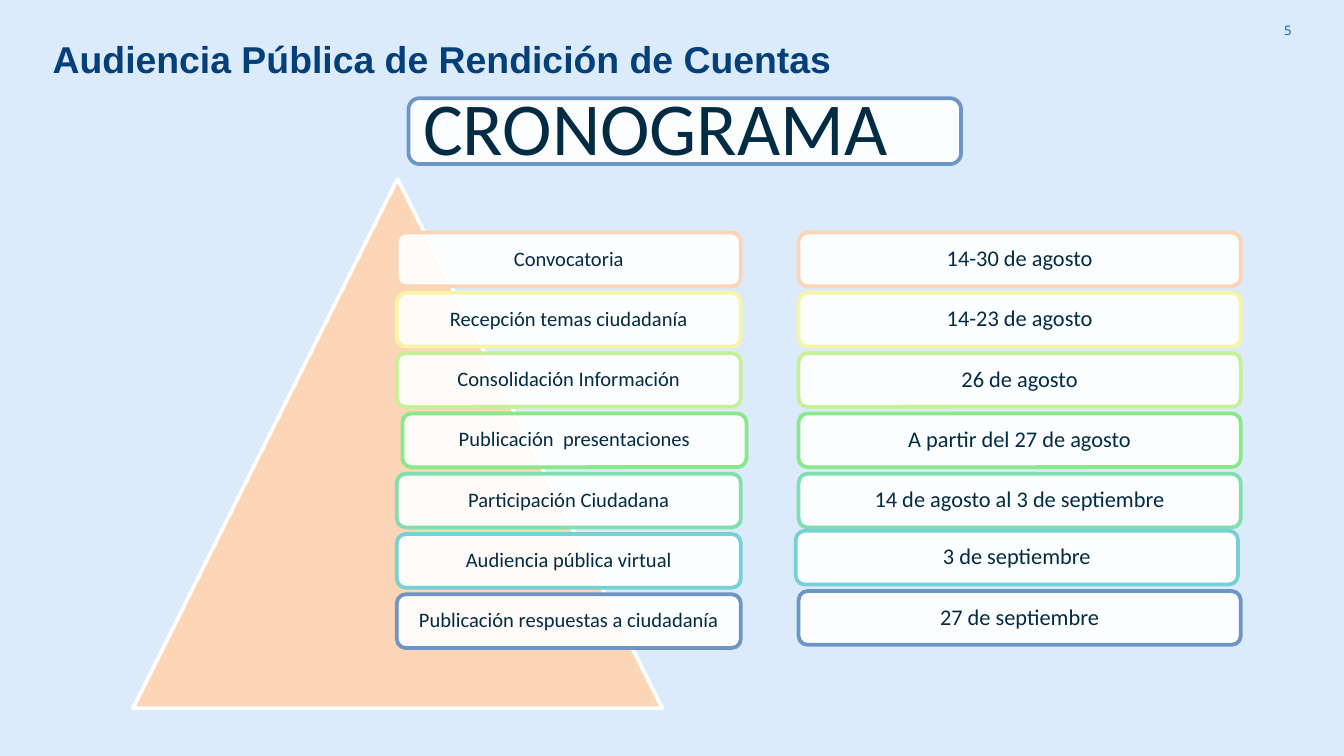
from lxml import etree
from pptx import Presentation
from pptx.dml.color import RGBColor
from pptx.enum.shapes import MSO_SHAPE
from pptx.enum.text import MSO_ANCHOR, MSO_AUTO_SIZE, PP_ALIGN
from pptx.oxml.ns import qn
from pptx.util import Pt

ROUND_RECT, TRIANGLE = MSO_SHAPE.ROUNDED_RECTANGLE, MSO_SHAPE.ISOSCELES_TRIANGLE
TOP, MIDDLE = MSO_ANCHOR.TOP, MSO_ANCHOR.MIDDLE
LEFT, CENTER, RIGHT = PP_ALIGN.LEFT, PP_ALIGN.CENTER, PP_ALIGN.RIGHT
NO_AUTOFIT = MSO_AUTO_SIZE.NONE

SKY = RGBColor(0xDC, 0xEB, 0xFB)
WHITE = RGBColor(0xFF, 0xFF, 0xFF)
NAVY = RGBColor(0x03, 0x3F, 0x78)
INK = RGBColor(0x02, 0x2B, 0x44)
BLUE = RGBColor(0x00, 0x54, 0xBC)
PEACH = RGBColor(0xFB, 0xD5, 0xB5)
YELLOW = RGBColor(0xF6, 0xF4, 0xA5)
LIME = RGBColor(0xC5, 0xF0, 0x97)
GREEN = RGBColor(0x8A, 0xE8, 0x8A)
MINT = RGBColor(0x7F, 0xDF, 0xB0)
TEAL = RGBColor(0x75, 0xD1, 0xD4)
STEEL = RGBColor(0x6D, 0x96, 0xC7)

SCHEDULE = [
    ("Convocatoria", "14-30 de agosto", PEACH),
    ("Recepción temas ciudadanía", "14-23 de agosto", YELLOW),
    ("Consolidación Información", "26 de agosto", LIME),
    ("Publicación  presentaciones", "A partir del 27 de agosto", GREEN),
    ("Participación Ciudadana", "14 de agosto al 3 de septiembre", MINT),
    ("Audiencia pública virtual", "3 de septiembre", TEAL),
    ("Publicación respuestas a ciudadanía", "27 de septiembre", STEEL),
]
ROW_TOP, ROW_STEP, ROW_HEIGHT = 124.6, 32.3, 28.8
# Small shifts (x, y) of single boxes, by row
STEP_SHIFT = {3: (3, 0)}
DATE_SHIFT = {5: (-1.5, -1.7), 6: (0, -1.7)}


def write(tf, text, *, size, color, font="Calibri", bold=False, align=CENTER,
          anchor=MIDDLE, spacing=1.0, insets=(3.6, 3.6, 3.6, 3.6)):
    """Fill a text frame with one paragraph; insets are left, top, right, bottom."""
    tf.word_wrap = True
    tf.auto_size = NO_AUTOFIT
    tf.vertical_anchor = anchor
    tf.margin_left, tf.margin_top, tf.margin_right, tf.margin_bottom = map(Pt, insets)
    p = tf.paragraphs[0]
    p.alignment = align
    p.line_spacing = spacing
    r = p.add_run()
    r.text = text
    r.font.name, r.font.size, r.font.bold = font, Pt(size), bold
    r.font.color.rgb = color


class Deck:
    """Holds the style and the current slide."""

    line_width = 2
    box_opacity = 90

    def __init__(self, prs):
        self.s = prs.slides.add_slide(prs.slide_layouts[5])
        fill = self.s.background.fill
        fill.solid()
        fill.fore_color.rgb = SKY

    def title(self, text, x, y, w, h):
        sp = self.s.shapes.title
        sp.left, sp.top, sp.width, sp.height = map(Pt, (x, y, w, h))
        write(sp.text_frame, text, size=20, color=NAVY, font="Arial", bold=True,
              align=LEFT, anchor=TOP, insets=(7.2, 3.6, 7.2, 3.6))

    def label(self, text, x, y, w, h, **style):
        sp = self.s.shapes.add_textbox(*map(Pt, (x, y, w, h)))
        write(sp.text_frame, text, **style)

    def shape(self, kind, x, y, w, h, fill, line):
        sp = self.s.shapes.add_shape(kind, *map(Pt, (x, y, w, h)))
        sp.shadow.inherit = False
        sp.fill.solid()
        sp.fill.fore_color.rgb = fill
        sp.line.color.rgb = line
        sp.line.width = Pt(self.line_width)
        return sp

    def box(self, text, x, y, w, h, line, **style):
        """Add a translucent white rounded box with text."""
        sp = self.shape(ROUND_RECT, x, y, w, h, WHITE, line)
        color = sp.fill._xPr.find(qn("a:solidFill"))[0]
        etree.SubElement(color, qn("a:alpha"), val=str(self.box_opacity * 1000))
        write(sp.text_frame, text, color=INK, spacing=0.9, **style)

    def column(self, texts, x, w, shifts, size):
        for i, (text, (*_, color)) in enumerate(zip(texts, SCHEDULE)):
            dx, dy = shifts.get(i, (0, 0))
            self.box(text, x + dx, ROW_TOP + i * ROW_STEP + dy, w, ROW_HEIGHT,
                     color, size=size)


def main():
    prs = Presentation()
    prs.slide_width, prs.slide_height = Pt(720), Pt(405)
    deck = Deck(prs)
    deck.label("5", 656, 0.7, 43, 31, size=7, color=BLUE, font="Open Sans",
               align=RIGHT, insets=(7.2, 7.2, 7.2, 7.2))
    deck.title("Audiencia Pública de Rendición de Cuentas", 21, 16, 525.6, 55.4)
    deck.box("CRONOGRAMA", 218.9, 52.6, 296, 35.3, STEEL, size=40,
             insets=(0, 0, 31.7, 0))
    deck.shape(TRIANGLE, 71.2, 95.8, 283.6, 283.6, PEACH, WHITE)
    steps, dates, _ = zip(*SCHEDULE)
    deck.column(steps, 212.6, 184.3, STEP_SHIFT, 11)
    deck.column(dates, 427.8, 236.9, DATE_SHIFT, 12)
    prs.save("out.pptx")


if __name__ == "__main__":
    main()
